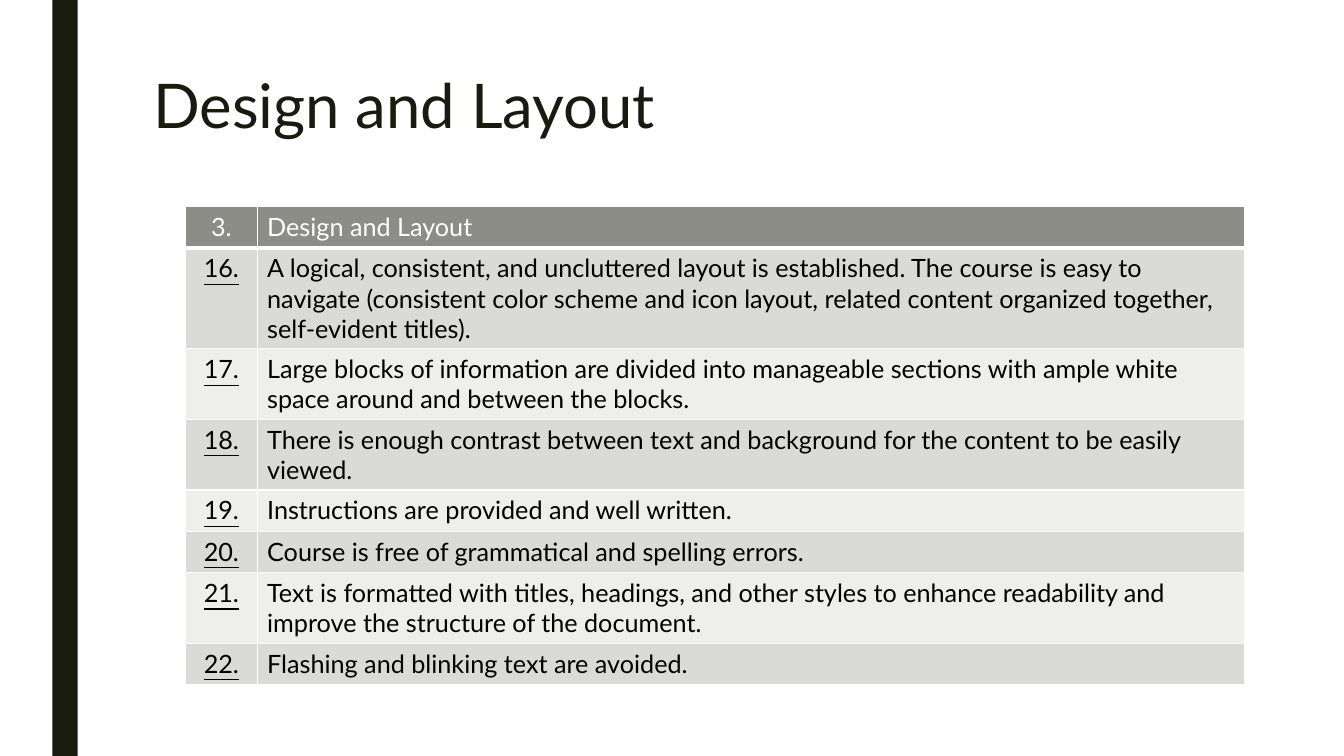
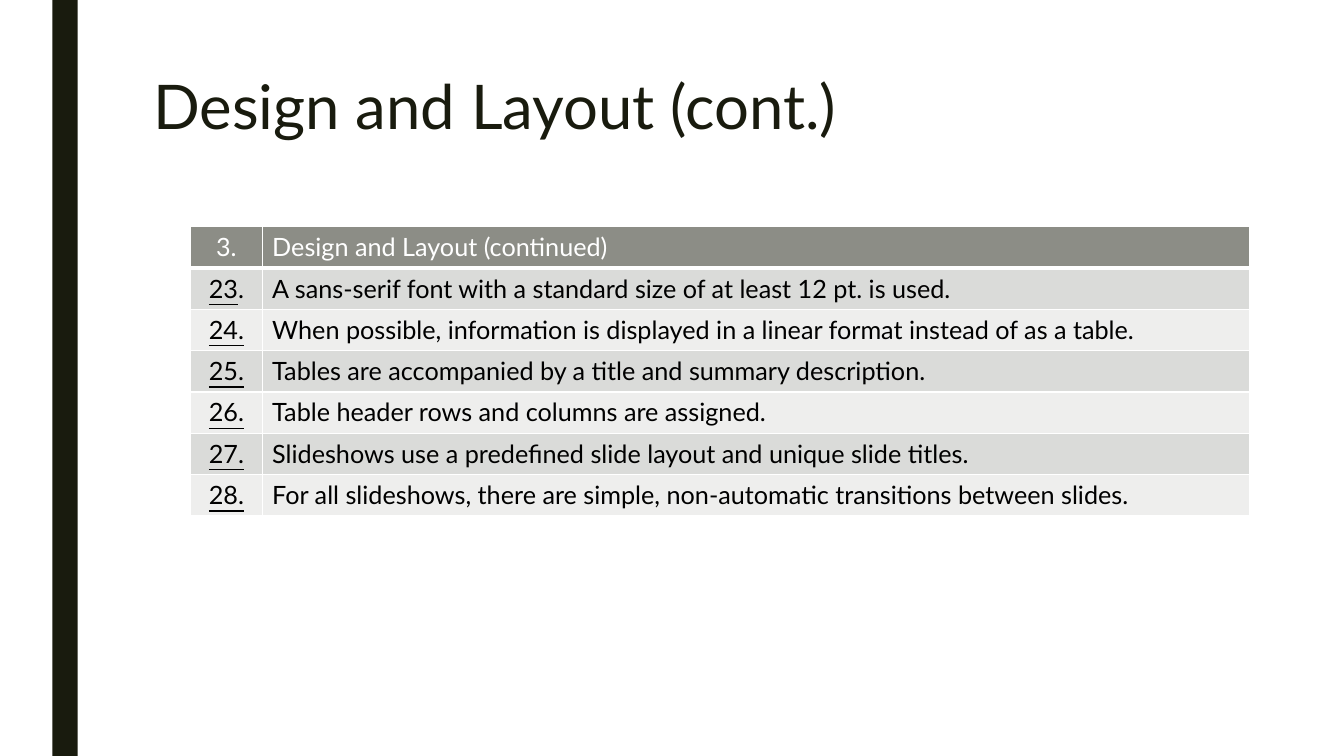
import pptx
import pptx.dml.color
import pptx.enum.shapes
import pptx.enum.text
import pptx.oxml
import pptx.oxml.ns
import pptx.util
from pptx.util import Inches, Pt

FONT = "Lato"
DARK, WHITE, BLACK = "191B0E", "FFFFFF", "000000"
HEADER_FILL, BANDS = "8C8D86", ("DADBD9", "EEEEED")
COLUMN_WIDTHS = (0.71, 9.79)
ROW_HEIGHT = 0.41
PLAIN_DOT = {23}  # items whose full stop is not underlined

SLIDES = [
    {
        "title": "Design and Layout",
        "title_top": 0.7,
        "table_at": (1.84, 2.05),
        "heading": "Design and Layout",
        "first_number": 16,
        "criteria": [
            "A logical, consistent, and uncluttered layout is established. The course is easy to "
            "navigate (consistent color scheme and icon layout, related content organized together, "
            "self-evident titles).",
            "Large blocks of information are divided into manageable sections with ample white "
            "space around and between the blocks.",
            "There is enough contrast between text and background for the content to be easily viewed.",
            "Instructions are provided and well written.",
            "Course is free of grammatical and spelling errors.",
            "Text is formatted with titles, headings, and other styles to enhance readability and "
            "improve the structure of the document.",
            "Flashing and blinking text are avoided.",
        ],
    },
    {
        "title": "Design and Layout (cont.)",
        "title_top": 0.71,
        "table_at": (1.89, 2.25),
        "heading": "Design and Layout (continued)",
        "first_number": 23,
        "criteria": [
            "A sans-serif font with a standard size of at least 12 pt. is used.",
            "When possible, information is displayed in a linear format instead of as a table.",
            "Tables are accompanied by a title and summary description.",
            "Table header rows and columns are assigned.",
            "Slideshows use a predefined slide layout and unique slide titles.",
            "For all slideshows, there are simple, non-automatic transitions between slides.",
        ],
    },
]


def color(value):
    return pptx.dml.color.RGBColor.from_string(value)


def style_font(font, size, value):
    font.name, font.size, font.bold = FONT, Pt(size), False
    font.color.rgb = color(value)


def add_side_band(slide):
    band = slide.shapes.add_shape(
        pptx.enum.shapes.MSO_SHAPE.RECTANGLE, Inches(0.52), 0, Inches(0.25), Inches(7.5))
    band.shadow.inherit = False
    band.fill.solid()
    band.fill.fore_color.rgb = color(DARK)
    band.line.fill.background()


def set_title(slide, text, top):
    title = slide.shapes.title
    title.left, title.top = Inches(1.42), Inches(top)
    title.width, title.height = Inches(10.5), Inches(1.62)
    frame = title.text_frame
    frame.text = text
    frame.word_wrap = True
    frame.auto_size = pptx.enum.text.MSO_AUTO_SIZE.NONE
    frame.vertical_anchor = pptx.enum.text.MSO_ANCHOR.TOP
    paragraph = frame.paragraphs[0]
    paragraph.alignment = pptx.enum.text.PP_ALIGN.LEFT
    paragraph.line_spacing = 0.89
    style_font(paragraph.font, 44, DARK)


def set_borders(cell, bottom):
    """White cell borders, 1 point except for the bottom one."""
    properties = cell._tc.get_or_add_tcPr()
    for side, points in (("L", 1), ("R", 1), ("T", 1), ("B", bottom)):
        properties.append(pptx.oxml.parse_xml(
            f'<a:ln{side} {pptx.oxml.ns.nsdecls("a")} w="{Pt(points)}"><a:solidFill>'
            f'<a:srgbClr val="{WHITE}"/></a:solidFill></a:ln{side}>'))


def fill_cell(cell, runs, fill, text_color, centered=False, bottom=1):
    """Write (text, underlined) runs into a formatted cell."""
    set_borders(cell, bottom)
    cell.fill.solid()
    cell.fill.fore_color.rgb = color(fill)
    paragraph = cell.text_frame.paragraphs[0]
    if centered:
        paragraph.alignment = pptx.enum.text.PP_ALIGN.CENTER
    style_font(paragraph.font, 18, text_color)
    for text, underlined in runs:
        run = paragraph.add_run()
        run.text = text
        style_font(run.font, 18, text_color)
        if underlined:
            run.font.underline = True


def number_runs(number):
    if number in PLAIN_DOT:
        return [(str(number), True), (".", False)]
    return [(f"{number}.", True)]


def add_criteria_table(slide, content):
    left, top = content["table_at"]
    criteria = content["criteria"]
    row_count = len(criteria) + 1
    table = slide.shapes.add_table(
        row_count, len(COLUMN_WIDTHS), Inches(left), Inches(top),
        Inches(sum(COLUMN_WIDTHS)), Inches(ROW_HEIGHT * row_count)).table
    for column, width in zip(table.columns, COLUMN_WIDTHS):
        column.width = Inches(width)
    for row in table.rows:
        row.height = Inches(ROW_HEIGHT)

    fill_cell(table.cell(0, 0), [("3.", False)], HEADER_FILL, WHITE, centered=True, bottom=3)
    fill_cell(table.cell(0, 1), [(content["heading"], False)], HEADER_FILL, WHITE, bottom=3)
    for index, criterion in enumerate(criteria):
        fill = BANDS[index % 2]
        number = content["first_number"] + index
        fill_cell(table.cell(index + 1, 0), number_runs(number), fill, BLACK, centered=True)
        fill_cell(table.cell(index + 1, 1), [(criterion, False)], fill, BLACK)


def main():
    deck = pptx.Presentation()
    deck.slide_width, deck.slide_height = Inches(13.33), Inches(7.5)
    title_only = deck.slide_layouts[5]
    for content in SLIDES:
        slide = deck.slides.add_slide(title_only)
        add_side_band(slide)
        set_title(slide, content["title"], content["title_top"])
        add_criteria_table(slide, content)
    deck.save("out.pptx")


if __name__ == "__main__":
    main()
